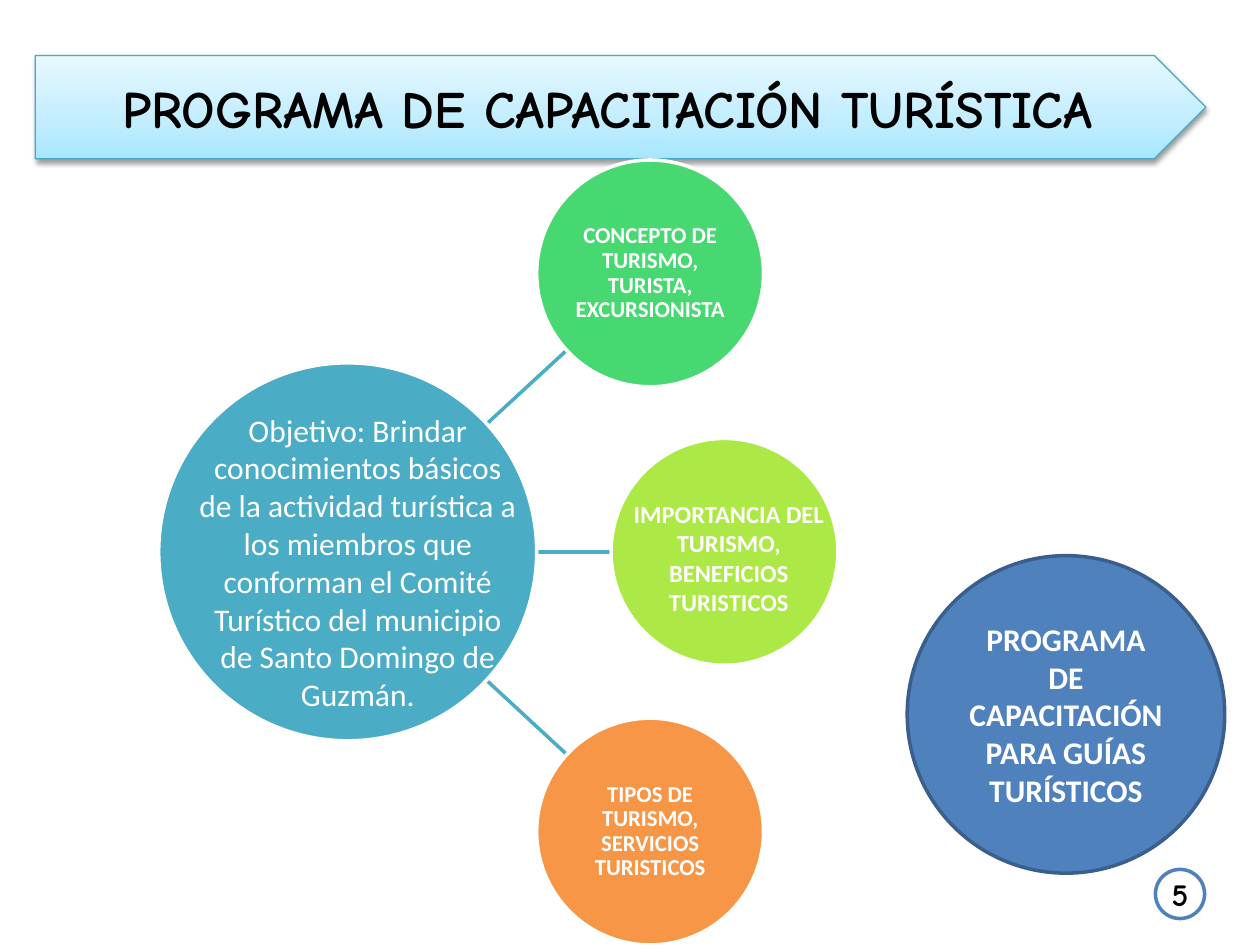
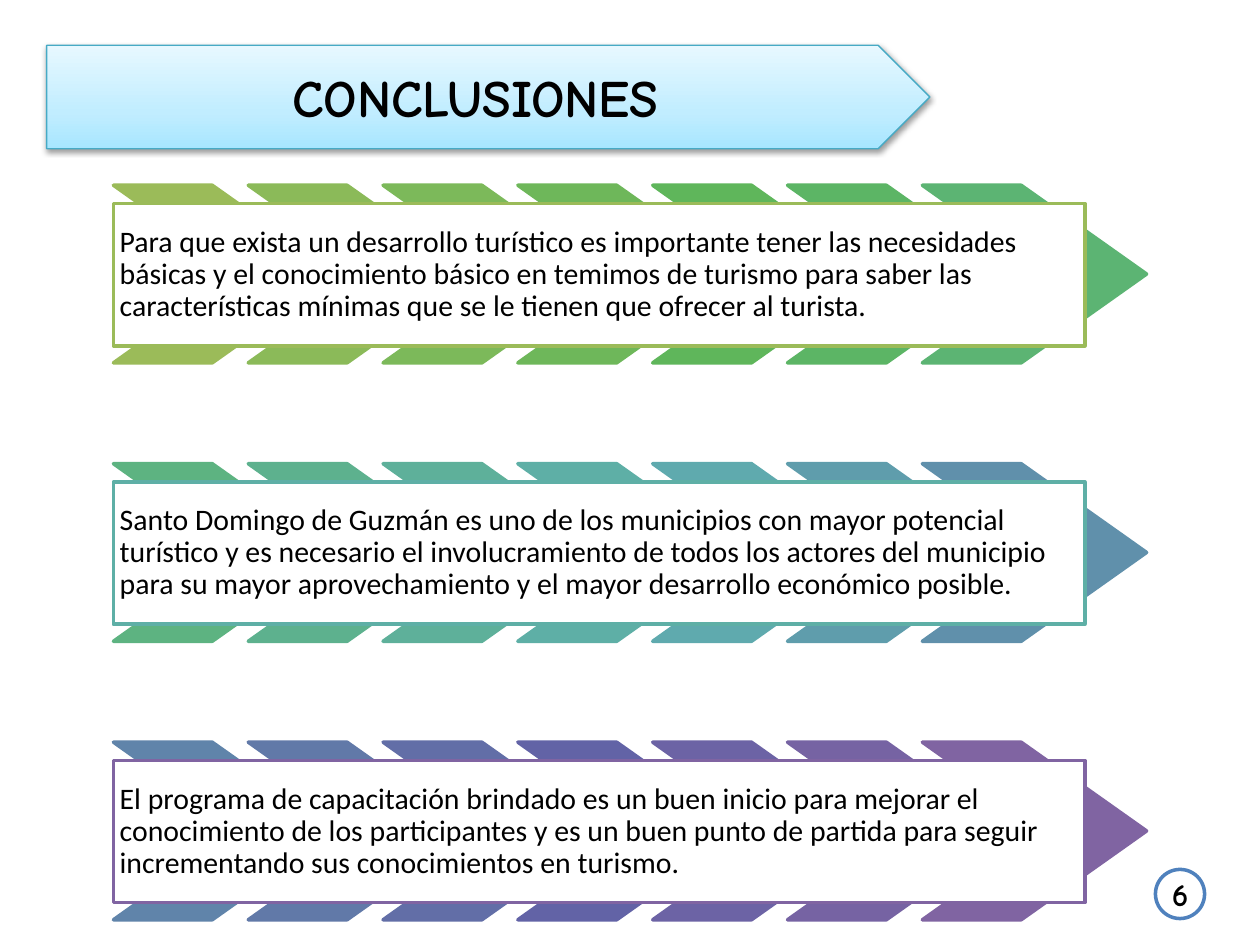
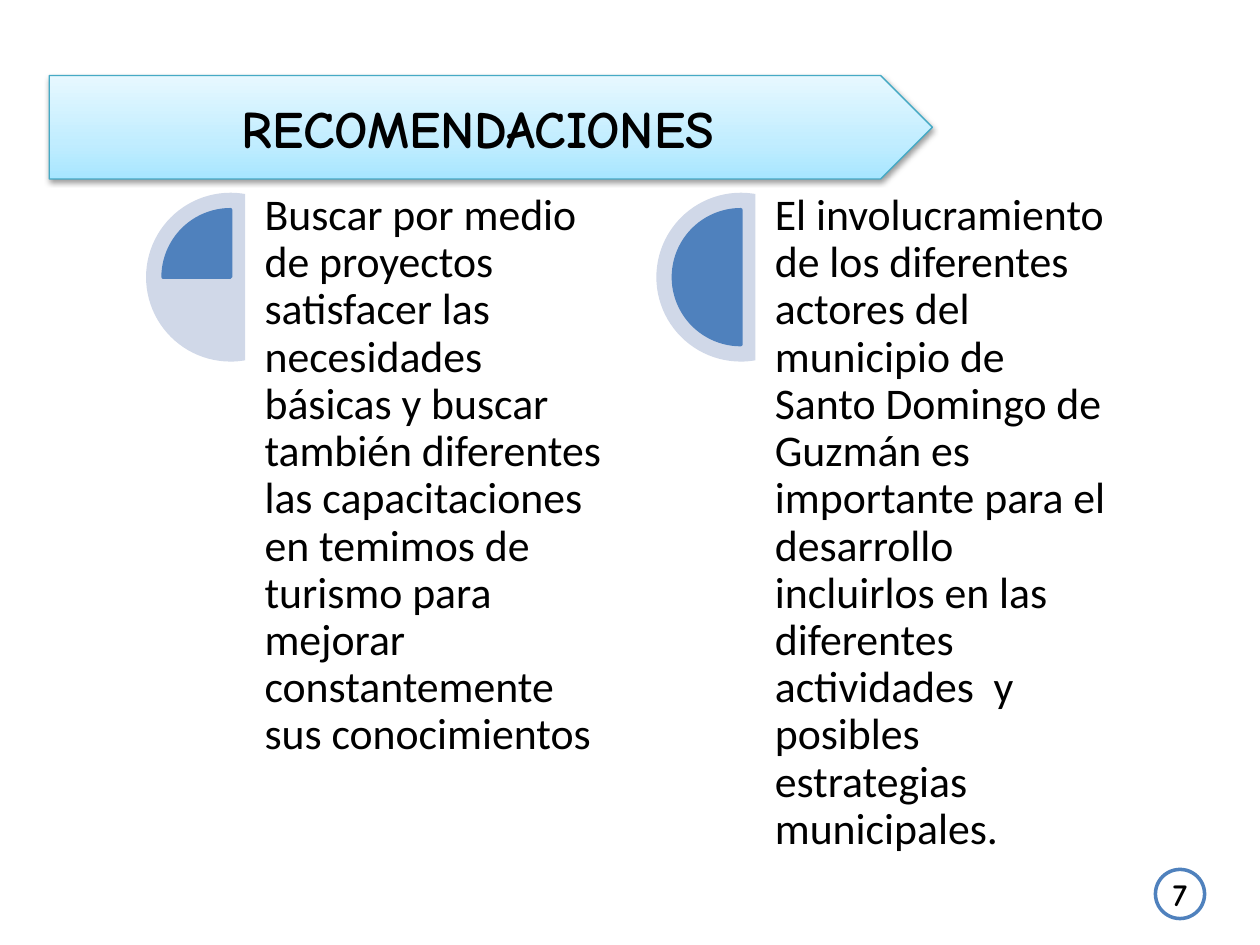
from dataclasses import dataclass
from math import hypot

from pptx import Presentation
from pptx.dml.color import RGBColor
from pptx.enum.shapes import MSO_CONNECTOR, MSO_SHAPE
from pptx.enum.text import MSO_ANCHOR, MSO_AUTO_SIZE, PP_ALIGN
from pptx.oxml import parse_xml
from pptx.oxml.ns import nsdecls, qn
from pptx.util import Inches, Pt

COLUMNS, ROWS = 20, 15
CELL = Inches(10) / COLUMNS


@dataclass(frozen=True)
class Theme:
    heading_font: str = "Comic Neue"
    body_font: str = "Calibri"
    black: str = "000000"
    white: str = "FFFFFF"
    blue: str = "4F81BD"
    blue_edge: str = "3A5F8C"
    pale_blue: str = "D0D8E8"
    teal: str = "4BACC6"
    green: str = "47D872"
    lime: str = "ACE946"
    orange: str = "F79646"
    banner_edge: str = "46AAC5"
    banner_stops: tuple = ((0, "A7E6FF"), (35, "C1EDFF"), (100, "E7F8FF"))
    title_size: int = 30
    recommendation_size: int = 25
    lead_size: int = 18
    conclusion_size: int = 17
    importance_size: int = 14
    topic_size: int = 13
    line_width: float = 2
    thin_line: float = 0.75
    tight: float = 0.9


THEME = Theme()


@dataclass(frozen=True)
class Box:
    left: float
    top: float
    width: float
    height: float

    def inner(self, left, top, width, height):
        return Box(self.left + left, self.top + top, width, height)

    @property
    def center(self):
        return self.left + self.width / 2, self.top + self.height / 2

    @property
    def lengths(self):
        return [cells(v) for v in (self.left, self.top, self.width, self.height)]


def cells(count):
    return round(count * CELL)


def color(value):
    return RGBColor.from_string(value)


def add_figure(page, kind, box, fill, edge=None, width=THEME.line_width, adjust=()):
    figure = page.shapes.add_shape(kind, *box.lengths)
    figure.shadow.inherit = False
    figure.fill.solid()
    figure.fill.fore_color.rgb = color(fill)
    if edge:
        figure.line.color.rgb = color(edge)
        figure.line.width = Pt(width)
    else:
        figure.line.fill.background()
    for index, value in enumerate(adjust):
        figure.adjustments[index] = value
    return figure


def write(holder, text, size, tint=THEME.black, bold=False, font=THEME.body_font,
          align=PP_ALIGN.CENTER, anchor=MSO_ANCHOR.MIDDLE, spacing=1.0,
          inset=None, wrap=True):
    frame = holder.text_frame
    frame.text = text
    frame.word_wrap = wrap
    frame.auto_size = MSO_AUTO_SIZE.NONE
    frame.vertical_anchor = anchor
    if inset is not None:
        frame.margin_left = frame.margin_right = Inches(inset)
        frame.margin_top = frame.margin_bottom = Inches(inset)
    para = frame.paragraphs[0]
    para.alignment = align
    para.line_spacing = spacing
    for span in para.runs:
        span.font.name = font
        span.font.size = Pt(size)
        span.font.bold = bold
        span.font.color.rgb = color(tint)


def add_caption(page, box, text, **style):
    write(page.shapes.add_textbox(*box.lengths), text, **style)


def style_banner(arrow):
    stops = "".join(
        f'<a:gs pos="{share * 1000}"><a:srgbClr val="{tint}"/></a:gs>'
        for share, tint in THEME.banner_stops)
    gradient = parse_xml(
        f'<a:gradFill {nsdecls("a")} rotWithShape="1"><a:gsLst>{stops}</a:gsLst>'
        '<a:lin ang="16200000" scaled="0"/></a:gradFill>')
    properties = arrow.element.spPr
    properties.replace(properties.find(qn("a:solidFill")), gradient)
    properties.find(qn("a:effectLst")).append(parse_xml(
        f'<a:outerShdw {nsdecls("a")} blurRad="40000" dist="20000" dir="5400000" '
        'rotWithShape="0"><a:srgbClr val="000000"><a:alpha val="38000"/></a:srgbClr>'
        '</a:outerShdw>'))


def add_banner(page, box, text):
    arrow = add_figure(page, MSO_SHAPE.PENTAGON, box, THEME.white,
                       THEME.banner_edge, THEME.thin_line)
    style_banner(arrow)
    title = page.shapes.title
    title.element.addprevious(arrow.element)
    body = box.inner(0, 0, box.width - box.height / 4, box.height)
    title.left, title.top, title.width, title.height = body.lengths
    write(title, text, THEME.title_size, bold=True, font=THEME.heading_font, wrap=False)


def add_page_number(page, box, number):
    badge = add_figure(page, MSO_SHAPE.OVAL, box, THEME.white, THEME.blue)
    write(badge, str(number), THEME.lead_size, bold=True,
          font=THEME.heading_font, inset=0, wrap=False)


def add_page(deck, title, banner, number):
    page = deck.slides.add_slide(deck.slide_layouts[5])
    add_page_number(page, Box(18.34, 13.8, 0.78, 0.78), number)
    add_banner(page, banner, title)
    return page


def add_spoke(page, hub, topic):
    (start_x, start_y), (end_x, end_y) = hub.center, topic.center
    distance = hypot(end_x - start_x, end_y - start_y)
    near = hub.width / 2 / distance
    far = 1 - topic.width / 2 / distance
    points = [cells(start + (end - start) * share)
              for share in (near, far)
              for start, end in ((start_x, end_x), (start_y, end_y))]
    spoke = page.shapes.add_connector(MSO_CONNECTOR.STRAIGHT, *points)
    spoke.line.color.rgb = color(THEME.teal)
    spoke.line.width = Pt(THEME.line_width)
    spoke.element.spPr.append(parse_xml(f'<a:effectLst {nsdecls("a")}/>'))


def add_topic_wheel(page, box):
    hub = box.inner(0, 3.22, 6, 6)
    topics = [
        (box.inner(6, 0, 3.6, 3.6), THEME.green,
         "CONCEPTO DE TURISMO, TURISTA, EXCURSIONISTA"),
        (box.inner(7.18, 4.42, 3.6, 3.6), THEME.lime, None),
        (box.inner(6, 8.86, 3.6, 3.6), THEME.orange,
         "TIPOS DE TURISMO, SERVICIOS TURISTICOS"),
    ]
    for place, fill, text in topics:
        add_spoke(page, hub, place)
    add_figure(page, MSO_SHAPE.OVAL, hub, THEME.teal, THEME.white)
    for place, fill, text in topics:
        circle = add_figure(page, MSO_SHAPE.OVAL, place, fill, THEME.white)
        if text:
            write(circle, text, THEME.topic_size, THEME.white, bold=True,
                  spacing=THEME.tight, inset=0.01)
    add_caption(page, box.inner(0.4, 3.88, 5.52, 5.66),
                "Objetivo: Brindar conocimientos básicos de la actividad turística a los "
                "miembros que conforman el Comité Turístico del municipio de Santo "
                "Domingo de Guzmán.",
                size=THEME.lead_size, tint=THEME.white, anchor=MSO_ANCHOR.TOP)
    add_caption(page, box.inner(7.32, 5.28, 3.46, 3.3),
                "IMPORTANCIA DEL TURISMO, BENEFICIOS TURISTICOS",
                size=THEME.importance_size, tint=THEME.white, bold=True,
                anchor=MSO_ANCHOR.TOP)


def add_guide_program(page, box):
    circle = add_figure(page, MSO_SHAPE.OVAL, box, THEME.blue, THEME.blue_edge)
    write(circle, "PROGRAMA DE CAPACITACIÓN PARA GUÍAS TURÍSTICOS",
          THEME.lead_size, THEME.white, bold=True)


def add_conclusion(page, box, text, tints, edge):
    for index, tint in enumerate(tints):
        add_figure(page, MSO_SHAPE.CHEVRON, box.inner(index * 2.14, 0, 3.56, box.height),
                   tint, tint, adjust=[0.706])
    panel = add_figure(page, MSO_SHAPE.RECTANGLE, box.inner(0, 0.29, 15.42, 2.26),
                       THEME.white, edge)
    write(panel, text, THEME.conclusion_size, align=PP_ALIGN.LEFT,
          spacing=THEME.tight, inset=0.05)


def add_recommendation(page, box, text, pie_start):
    add_figure(page, MSO_SHAPE.CHORD, box.inner(0, 0, 2.68, 2.68), THEME.pale_blue,
               adjust=[48, 168])
    add_figure(page, MSO_SHAPE.PIE, box.inner(0.27, 0.27, 2.14, 2.14), THEME.blue,
               THEME.blue, adjust=[pie_start, 162])
    add_caption(page, box.inner(1.88, 0, box.width - 1.88, box.height), text,
                size=THEME.recommendation_size, align=PP_ALIGN.LEFT,
                anchor=MSO_ANCHOR.TOP, spacing=THEME.tight, inset=0)


def build_program(deck):
    page = add_page(deck, "PROGRAMA DE CAPACITACIÓN TURÍSTICA",
                    Box(0.56, 0.88, 18.58, 1.64), 5)
    add_topic_wheel(page, Box(2.52, 2.54, 10.78, 12.46))
    add_guide_program(page, Box(14.4, 8.82, 5.04, 5.04))


def build_conclusions(deck):
    page = add_page(deck, "CONCLUSIONES", Box(0.74, 0.72, 14.02, 1.64), 6)
    conclusions = [
        ("Para que exista un desarrollo turístico es importante tener las necesidades "
         "básicas y el conocimiento básico en temimos de turismo para saber las "
         "características mínimas que se le tienen que ofrecer al turista.",
         "9BBB59 8BBA59 7CB95A 6EB75A 5FB65B 5CB565 5CB473", "9BBB59"),
        ("Santo Domingo de Guzmán es uno de los municipios con mayor potencial turístico "
         "y es necesario el involucramiento de todos los actores del municipio para su "
         "mayor aprovechamiento y el mayor desarrollo económico posible.",
         "5DB381 5DB18E 5EB09A 5EAFA6 5FAAAE 5F9DAC 6090AB", "5EAFA6"),
        ("El programa de capacitación brindado es un buen inicio para mejorar el "
         "conocimiento de los participantes y es un buen punto de partida para seguir "
         "incrementando sus conocimientos en turismo.",
         "6084AA 6179A8 626EA7 6263A6 6C63A5 7663A3 8064A2", "8064A2"),
    ]
    for index, (text, tints, edge) in enumerate(conclusions):
        add_conclusion(page, Box(1.8, 2.94 + index * 4.42, 16.4, 2.82),
                       text, tints.split(), edge)


def build_recommendations(deck):
    page = add_page(deck, "RECOMENDACIONES", Box(0.78, 1.2, 14.02, 1.64), 7)
    recommendations = [
        ("Buscar por medio de proyectos satisfacer las necesidades básicas y buscar "
         "también diferentes las capacitaciones en temimos de turismo para mejorar "
         "constantemente sus conocimientos", 108),
        ("El involucramiento de los diferentes actores del municipio de Santo Domingo de "
         "Guzmán es importante para el desarrollo incluirlos en las diferentes "
         "actividades  y posibles estrategias municipales.", 54),
    ]
    for index, (text, pie_start) in enumerate(recommendations):
        add_recommendation(page, Box(2.32 + index * 8.1, 3.06, 7.26, 10.74),
                           text, pie_start)


def main():
    deck = Presentation()
    deck.slide_width, deck.slide_height = cells(COLUMNS), cells(ROWS)
    build_program(deck)
    build_conclusions(deck)
    build_recommendations(deck)
    deck.save("out.pptx")


if __name__ == "__main__":
    main()
